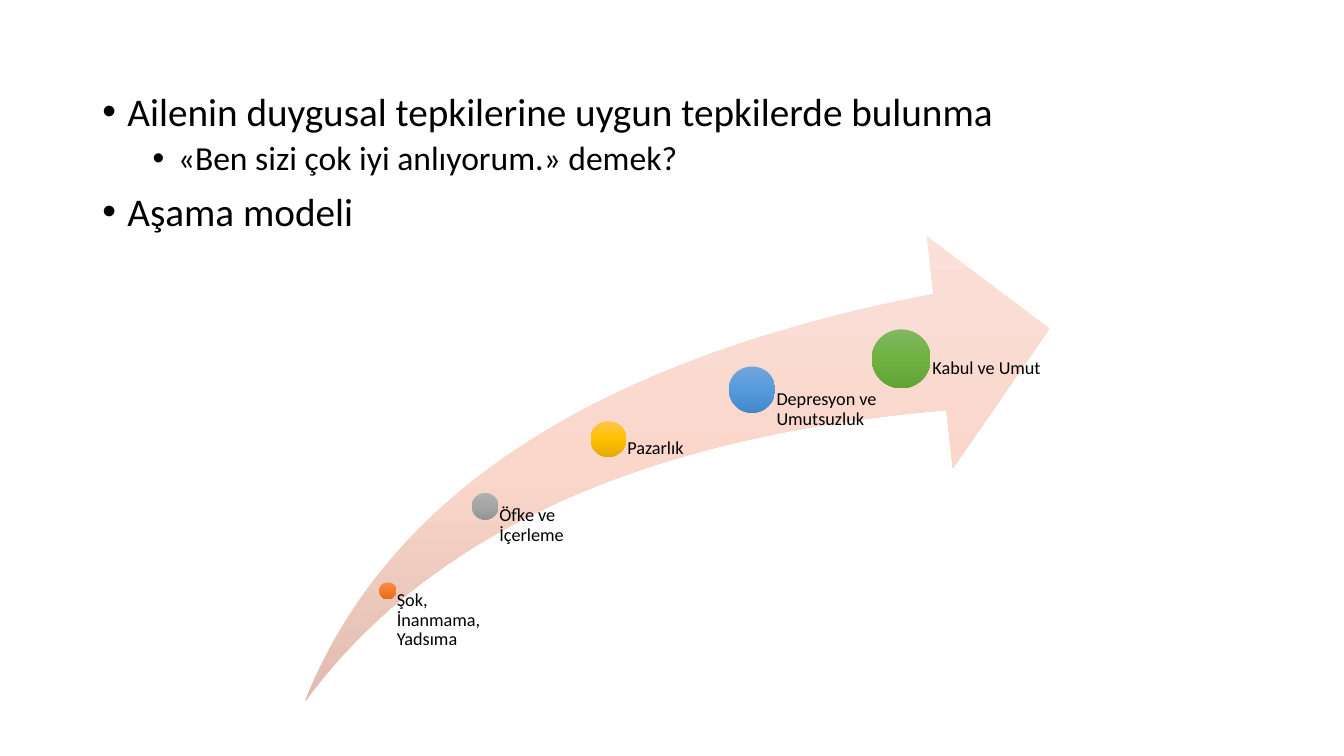
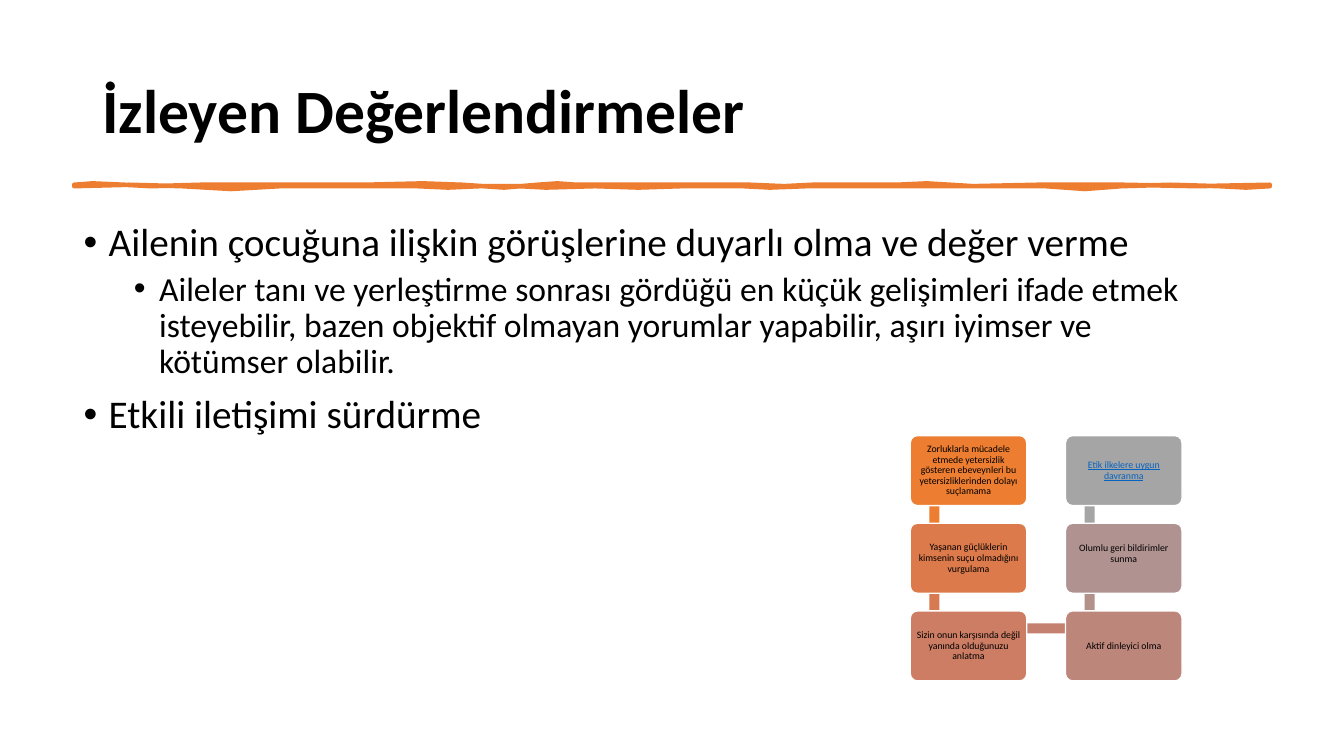
from copy import deepcopy

from lxml.etree import SubElement
from pptx import Presentation
from pptx.dml.color import RGBColor
from pptx.enum.shapes import MSO_SHAPE
from pptx.enum.text import MSO_ANCHOR, MSO_AUTO_SIZE, PP_ALIGN
from pptx.oxml.ns import qn
from pptx.util import Pt

BLACK = RGBColor(0x00, 0x00, 0x00)
WHITE = RGBColor(0xFF, 0xFF, 0xFF)
ORANGE = RGBColor(0xED, 0x7D, 0x31)
RUST = RGBColor(0xD8, 0x7A, 0x51)
COPPER = RGBColor(0xDC, 0x7A, 0x4B)
CLAY = RGBColor(0xCC, 0x7D, 0x64)
ROSE = RGBColor(0xC4, 0x81, 0x70)
BLUSH = RGBColor(0xBD, 0x86, 0x7B)
MAUVE = RGBColor(0xB4, 0x90, 0x8B)
DUSK = RGBColor(0xB0, 0x93, 0x91)
GREY = RGBColor(0xA5, 0xA5, 0xA5)
BLUE = RGBColor(0x05, 0x63, 0xC1)
PEACH_FADE = (RGBColor(0xFA, 0xE0, 0xD8), RGBColor(0xFA, 0xD6, 0xCB), RGBColor(0xE2, 0xBC, 0xB1))
ORANGE_FADE = (RGBColor(0xF1, 0x8C, 0x57), RGBColor(0xF6, 0x7B, 0x28), RGBColor(0xE5, 0x6C, 0x19))
GREY_FADE = (RGBColor(0xAF, 0xAF, 0xAF), GREY, RGBColor(0x93, 0x93, 0x93))
GOLD_FADE = (RGBColor(0xFF, 0xC6, 0x4B), RGBColor(0xFF, 0xC0, 0x00), RGBColor(0xE3, 0xAB, 0x00))
BLUE_FADE = (RGBColor(0x71, 0xA6, 0xDB), RGBColor(0x55, 0x9B, 0xDB), RGBColor(0x44, 0x8A, 0xCA))
GREEN_FADE = (RGBColor(0x81, 0xB8, 0x61), RGBColor(0x6F, 0xB2, 0x42), RGBColor(0x62, 0xA3, 0x36))

STAGES = [
    ("Şok, İnanmama, Yadsıma", 277, 422, 12.2, 70, ORANGE_FADE),
    ("Öfke ve İçerleme", 346.6, 361.6, 19.1, 88.5, GREY_FADE),
    ("Pazarlık", 434.6, 313.6, 25.5, 102, GOLD_FADE),
    ("Depresyon ve Umutsuzluk", 537.2, 278.3, 33, 106.5, BLUE_FADE),
    ("Kabul ve Umut", 643.8, 256.3, 42, 106.5, GREEN_FADE),
]
FLOOR = 500.4

STEPS = [
    ("Zorluklarla mücadele etmede yetersizlik gösteren ebeveynleri bu "
     "yetersizliklerinden dolayı suçlamama", ORANGE, ORANGE, {}),
    ("Yaşanan güçlüklerin kimsenin suçu olmadığını vurgulama", COPPER, RUST, {}),
    ("Sizin onun karşısında değil yanında olduğunuzu anlatma", CLAY, ROSE, {}),
    ("Aktif dinleyici olma", BLUSH, MAUVE, {}),
    ("Olumlu geri bildirimler sunma", DUSK, GREY, {"foot": 7.5, "lead": 1}),
    ("Etik ilkelere uygun davranma", GREY, None, {"color": BLUE, "under": True}),
]
ROWS = 3
STEP_X, STEP_Y, STEP_W, STEP_H = 650.2, 311.2, 83.2, 50
COL_GAP, ROW_GAP = 27.7, 12.6
BAR = 7.2

STROKE = [
    (52.6, 132), (66, 131.4), (89, 132), (108, 133), (143, 132), (174, 131.7), (204, 132),
    (260, 132), (302, 130.7), (330, 132), (360, 134), (384, 132), (398, 131.3), (412, 132),
    (435, 132.5), (465, 132), (536, 132), (560, 133.3), (580, 132), (602, 131.5), (625, 132),
    (640, 132.3), (662, 131.3), (679, 132), (695, 133), (741, 132), (803, 132), (855, 132.8),
    (907, 132), (907, 133.4), (890, 134.3), (871, 133.4), (836, 132.3), (801, 133.4),
    (775, 135), (747, 133.4), (666, 133.4), (576, 133.4), (550, 134.5), (531, 133.4),
    (509, 132.6), (487, 133.4), (456, 134.1), (425, 133.4), (390, 134.2), (371, 133.4),
    (343, 133.4), (320, 134), (298, 133.4), (236, 133.4), (200, 133.4), (165, 134.8),
    (130, 133.4), (92, 131.8), (52.6, 133.4),
]


class Deck:
    """Holds the shared style and the slide being drawn."""

    def __init__(self):
        self.show = Presentation()
        self.show.slide_width, self.show.slide_height = Pt(960), Pt(540)
        self.slide = None

    def page(self, title=None):
        kind = 5 if title else 6
        self.slide = self.show.slides.add_slide(self.show.slide_layouts[kind])
        if title:
            head = self.slide.shapes.title
            head.left, head.top, head.width, head.height = Pt(66), Pt(28.8), Pt(828), Pt(104.4)
            frame = head.text_frame
            frame.auto_size = MSO_AUTO_SIZE.NONE
            frame.vertical_anchor = MSO_ANCHOR.MIDDLE
            part = frame.paragraphs[0]
            part.alignment = PP_ALIGN.LEFT
            self.words(part, title, 44, bold=True)

    def words(self, part, text, size, color=BLACK, bold=False, under=False, lead=0.9):
        part.line_spacing = lead
        run = part.add_run()
        run.text = text
        font = run.font
        font.name, font.size, font.bold = "Calibri", Pt(size), bold
        font.color.rgb = color
        if under:
            font.underline = True

    def box(self, x, y, w, h):
        frame = self.slide.shapes.add_textbox(Pt(x), Pt(y), Pt(w), Pt(h)).text_frame
        frame.word_wrap = True
        return frame

    def points(self, x, y, w, h, items):
        frame = self.box(x, y, w, h)
        for place, (level, text) in enumerate(items):
            part = frame.add_paragraph() if place else frame.paragraphs[0]
            part.level = level
            if place:
                part.space_before = Pt(5 if level else 10)
            props = part._p.get_or_add_pPr()
            props.set("marL", str(Pt(18 + 36 * level)))
            props.set("indent", str(Pt(-18)))
            SubElement(props, qn("a:buFont"), typeface="Arial")
            SubElement(props, qn("a:buChar"), char="•")
            self.words(part, text, 24 if level else 28)

    def label(self, x, y, w, h, text, inset):
        frame = self.box(x, y, w, h)
        frame.margin_left = Pt(inset)
        frame.margin_top = frame.margin_right = frame.margin_bottom = 0
        self.words(frame.paragraphs[0], text, 13)

    def shape(self, kind, x, y, w, h, fill=None):
        form = self.slide.shapes.add_shape(kind, Pt(x), Pt(y), Pt(w), Pt(h))
        form.shadow.inherit = False
        form.line.fill.background()
        if fill is not None:
            form.fill.solid()
            form.fill.fore_color.rgb = fill
        return form

    def fade(self, kind, x, y, w, h, tones):
        form = self.shape(kind, x, y, w, h)
        form.fill.gradient()
        form.fill.gradient_angle = 270
        stops = form._element.spPr.find(".//" + qn("a:gsLst"))
        stops.append(deepcopy(stops[0]))
        for stop, tone, place in zip(form.fill.gradient_stops, tones, (0, 0.5, 1)):
            stop.color.rgb = tone
            stop.position = place
        return form

    def card(self, x, y, w, h, text, fill, foot=0, **style):
        form = self.shape(MSO_SHAPE.ROUNDED_RECTANGLE, x, y, w, h, fill)
        form.adjustments[0] = 0.1
        form.line.color.rgb = WHITE
        form.line.width = Pt(1)
        frame = form.text_frame
        frame.word_wrap = True
        frame.vertical_anchor = MSO_ANCHOR.MIDDLE
        frame.margin_left = frame.margin_right = frame.margin_top = Pt(2.2)
        frame.margin_bottom = Pt(2.2 + foot)
        part = frame.paragraphs[0]
        part.alignment = PP_ALIGN.CENTER
        self.words(part, text, 7, **style)

    def link(self, start, end, fill):
        (x1, y1), (x2, y2) = start, end
        self.shape(MSO_SHAPE.RECTANGLE, min(x1, x2) - BAR / 2, min(y1, y2) - BAR / 2,
                   abs(x2 - x1) + BAR, abs(y2 - y1) + BAR, fill)

    def stroke(self, dots):
        pen = self.slide.shapes.build_freeform(*dots[0], scale=Pt(1))
        pen.add_line_segments(dots[1:], close=True)
        form = pen.convert_to_shape()
        form.shadow.inherit = False
        form.fill.solid()
        form.fill.fore_color.rgb = form.line.color.rgb = ORANGE
        form.line.width = Pt(3.25)


def stages(deck):
    deck.page()
    deck.points(66, 62.6, 828, 342.7, [
        (0, "Ailenin duygusal tepkilerine uygun tepkilerde bulunma"),
        (1, "«Ben sizi çok iyi anlıyorum.» demek?"),
        (0, "Aşama modeli"),
    ])
    arrow = deck.fade(MSO_SHAPE.SWOOSH_ARROW, 218.2, 168.5, 531.4, FLOOR - 168.5, PEACH_FADE)
    arrow.adjustments[0] = arrow.adjustments[1] = 0.25
    for text, x, y, size, width, tones in STAGES:
        deck.fade(MSO_SHAPE.OVAL, x - size / 2, y - size / 2, size, size, tones)
        deck.label(x, y, width, FLOOR - y, text, size * 0.53)


def steps(deck):
    deck.page("İzleyen Değerlendirmeler")
    deck.stroke(STROKE)
    deck.points(52.6, 155.5, 828, 229, [
        (0, "Ailenin çocuğuna ilişkin görüşlerine duyarlı olma ve değer verme"),
        (1, "Aileler tanı ve yerleştirme sonrası gördüğü en küçük gelişimleri ifade etmek "
            "isteyebilir, bazen objektif olmayan yorumlar yapabilir, aşırı iyimser ve "
            "kötümser olabilir."),
        (0, "Etkili iletişimi sürdürme"),
    ])
    spots = []
    for place in range(len(STEPS)):
        col, row = divmod(place, ROWS)
        row = ROWS - 1 - row if col else row
        spots.append((STEP_X + col * (STEP_W + COL_GAP), STEP_Y + row * (STEP_H + ROW_GAP)))
    joints = [(x + 17.2, y + 12.5) for x, y in spots]
    for start, end, step in zip(joints, joints[1:], STEPS):
        deck.link(start, end, step[2])
    for (x, y), (text, fill, _, style) in zip(spots, STEPS):
        deck.card(x, y, STEP_W, STEP_H, text, fill, **style)


def main():
    deck = Deck()
    stages(deck)
    steps(deck)
    deck.show.save("out.pptx")


if __name__ == "__main__":
    main()
